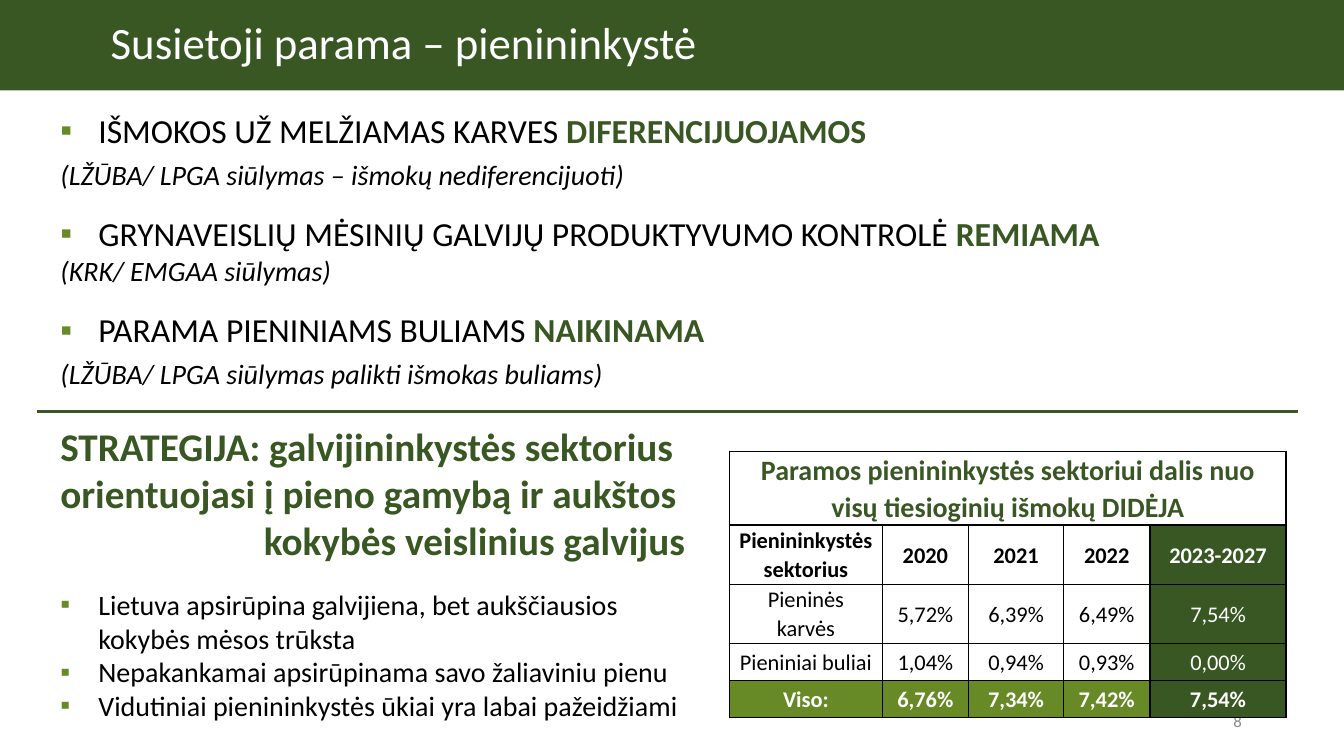
from lxml.etree import SubElement
from pptx import Presentation
from pptx.dml.color import RGBColor
from pptx.enum.shapes import MSO_CONNECTOR as Connector, MSO_SHAPE as Shape
from pptx.enum.text import MSO_ANCHOR as Anchor, PP_ALIGN as Align
from pptx.oxml.ns import qn
from pptx.util import Cm, Pt

COLORS = {"forest": "385723", "leaf": "678A26", "black": "000000",
          "white": "FFFFFF", "grey": "8C8C8C"}
FONT = "Calibri"
TEXT_EDGE, BULLET_TEXT, STRATEGY_END = 1.27, 2.23, 6.4  # indents in cm

# Plain text, verdict, gap above it, note, gap above the note
MEASURES = [
    ("IŠMOKOS UŽ MELŽIAMAS KARVES ", "DIFERENCIJUOJAMOS", 5,
     "(LŽŪBA/ LPGA siūlymas – išmokų nediferencijuoti)", 5),
    ("GRYNAVEISLIŲ MĖSINIŲ GALVIJŲ PRODUKTYVUMO KONTROLĖ ", "REMIAMA", 16,
     "(KRK/ EMGAA siūlymas)", 0),
    ("PARAMA PIENINIAMS BULIAMS ", "NAIKINAMA", 16,
     "(LŽŪBA/ LPGA siūlymas palikti išmokas buliams)", 5),
]
STRATEGY = [
    ("STRATEGIJA: galvijininkystės sektorius", TEXT_EDGE, 23),
    ("orientuojasi į pieno gamybą ir aukštos", TEXT_EDGE, 0),
    ("kokybės veislinius galvijus", STRATEGY_END, 0),
]
FACTS = [
    ("Lietuva apsirūpina galvijiena, bet aukščiausios\vkokybės mėsos trūksta", 17),
    ("Nepakankamai apsirūpinama savo žaliaviniu pienu", 0),
    ("Vidutiniai pienininkystės ūkiai yra labai pažeidžiami", 0),
]
SHARE_TITLE = "Paramos pienininkystės sektoriui dalis nuo visų tiesioginių išmokų DIDĖJA"
SHARES = [
    ["Pienininkystės sektorius", "2020", "2021", "2022", "2023-2027"],
    ["Pieninės karvės", "5,72%", "6,39%", "6,49%", "7,54%"],
    ["Pieniniai buliai", "1,04%", "0,94%", "0,93%", "0,00%"],
    ["Viso:", "6,76%", "7,34%", "7,42%", "7,54%"],
]
COLUMN_WIDTHS = [3.84, 2.18, 2.39, 2.18, 3.43]
ROW_HEIGHTS = [1.86, 1.49, 1.49, 0.94, 0.94]


def rgb(name):
    return RGBColor.from_string(COLORS[name])


def style(font, size, color, bold=False, italic=False):
    font.name, font.size, font.bold, font.italic = FONT, Pt(size), bold, italic
    font.color.rgb = rgb(color)


def indent(paragraph, left, bulleted=False):
    """Set the left indent in cm, with a hanging square bullet if asked for."""
    properties = paragraph._p.get_or_add_pPr()
    properties.set("marL", str(Cm(left)))
    properties.set("indent", str(Cm(TEXT_EDGE - left) if bulleted else 0))
    if bulleted:
        bullet_color = SubElement(properties, qn("a:buClr"))
        SubElement(bullet_color, qn("a:srgbClr"), val=COLORS["leaf"])
        SubElement(properties, qn("a:buFont"), typeface="Arial")
        SubElement(properties, qn("a:buChar"), char="▪")


def add_banner(slide, left, top, width, height):
    banner = slide.shapes.add_shape(Shape.RECTANGLE, left, top, width, height)
    banner.shadow.inherit = False
    banner.fill.solid()
    banner.fill.fore_color.rgb = rgb("forest")
    banner.line.fill.background()
    frame = banner.text_frame
    frame.margin_left = Cm(2.79)
    frame.vertical_anchor = Anchor.MIDDLE
    title = frame.paragraphs[0]
    title.text = "Susietoji parama – pienininkystė"
    title.alignment = Align.LEFT
    title.line_spacing = 0.9
    style(title.font, 32, "white")


def add_page_number(slide, left, top, width, height):
    frame = slide.shapes.add_textbox(left, top, width, height).text_frame
    frame.word_wrap = True
    frame.vertical_anchor = Anchor.MIDDLE
    number = frame.paragraphs[0]
    number.text = "8"
    number.alignment = Align.RIGHT
    style(number.font, 12, "grey")


def add_body(slide, left, top, width, height):
    """Measures with their notes, then the strategy and its supporting facts."""
    frame = slide.shapes.add_textbox(left, top, width, height).text_frame
    frame.word_wrap = True
    unused = [frame.paragraphs[0]]

    def add_line(text, left_indent, gap, size, color="black", bulleted=False,
                 bold=False, italic=False):
        line = unused.pop() if unused else frame.add_paragraph()
        line.text = text
        line.space_before = Pt(gap)
        indent(line, left_indent, bulleted)
        style(line.font, size, color, bold, italic)
        return line

    for measure, verdict, gap, note, note_gap in MEASURES:
        line = add_line(measure, BULLET_TEXT, gap, 24, bulleted=True)
        verdict_run = line.add_run()
        verdict_run.text = verdict
        style(verdict_run.font, 24, "forest", bold=True)
        add_line(note, TEXT_EDGE, note_gap, 20, italic=True)
    for text, left_indent, gap in STRATEGY:
        add_line(text, left_indent, gap, 28, "forest", bold=True)
    for fact, gap in FACTS:
        add_line(fact, BULLET_TEXT, gap, 20, bulleted=True)


def add_borders(cell):
    properties = cell._tc.get_or_add_tcPr()
    for position, side in enumerate(("a:lnL", "a:lnR", "a:lnT", "a:lnB")):
        border = SubElement(properties, qn(side), w=str(Pt(1)))
        fill = SubElement(border, qn("a:solidFill"))
        SubElement(fill, qn("a:srgbClr"), val=COLORS["black"])
        properties.insert(position, border)


def fill_cell(cell, text, size, color, bold, background):
    cell.margin_left = cell.margin_right = Cm(0.18)
    cell.margin_top = cell.margin_bottom = 0
    cell.vertical_anchor = Anchor.MIDDLE
    if background:
        cell.fill.solid()
        cell.fill.fore_color.rgb = rgb(background)
    else:
        cell.fill.background()
    paragraph = cell.text_frame.paragraphs[0]
    paragraph.text = text
    paragraph.alignment = Align.CENTER
    paragraph.line_spacing = 1.07
    style(paragraph.font, size, color, bold)


def add_share_table(slide, left, top, width, height):
    table = slide.shapes.add_table(len(ROW_HEIGHTS), len(COLUMN_WIDTHS),
                                   left, top, width, height).table
    for column, column_width in zip(table.columns, COLUMN_WIDTHS):
        column.width = Cm(column_width)
    for row, row_height in zip(table.rows, ROW_HEIGHTS):
        row.height = Cm(row_height)
    title = table.cell(0, 0)
    title.merge(table.cell(0, len(COLUMN_WIDTHS) - 1))
    fill_cell(title, SHARE_TITLE, 20, "forest", True, None)
    last_row, last_column = len(SHARES), len(COLUMN_WIDTHS) - 1
    for row, shares in enumerate(SHARES, start=1):
        for column, share in enumerate(shares):
            if column == last_column:
                background = "forest"
            else:
                background = "leaf" if row == last_row else None
            fill_cell(table.cell(row, column), share, 16,
                      "white" if background else "black",
                      row in (1, last_row), background)
    for cell in table.iter_cells():
        add_borders(cell)


def add_divider(slide, left, top, width):
    divider = slide.shapes.add_connector(Connector.STRAIGHT, left, top, left + width, top)
    divider.line.color.rgb = rgb("forest")
    divider.line.width = Pt(2.25)
    SubElement(divider._element.spPr, qn("a:effectLst"))


def main():
    deck = Presentation()
    deck.slide_width, deck.slide_height = Cm(33.87), Cm(19.05)
    slide = deck.slides.add_slide(deck.slide_layouts[6])
    add_banner(slide, 0, 0, deck.slide_width, Cm(2.28))
    add_page_number(slide, Cm(23.93), Cm(17.66), Cm(7.62), Cm(1.01))
    add_body(slide, 0, Cm(2.64), Cm(33), Cm(16.4))
    add_share_table(slide, Cm(18.39), Cm(11.37), Cm(sum(COLUMN_WIDTHS)), Cm(sum(ROW_HEIGHTS)))
    add_divider(slide, Cm(0.94), Cm(10.36), Cm(31.78))
    deck.save("out.pptx")


if __name__ == "__main__":
    main()
